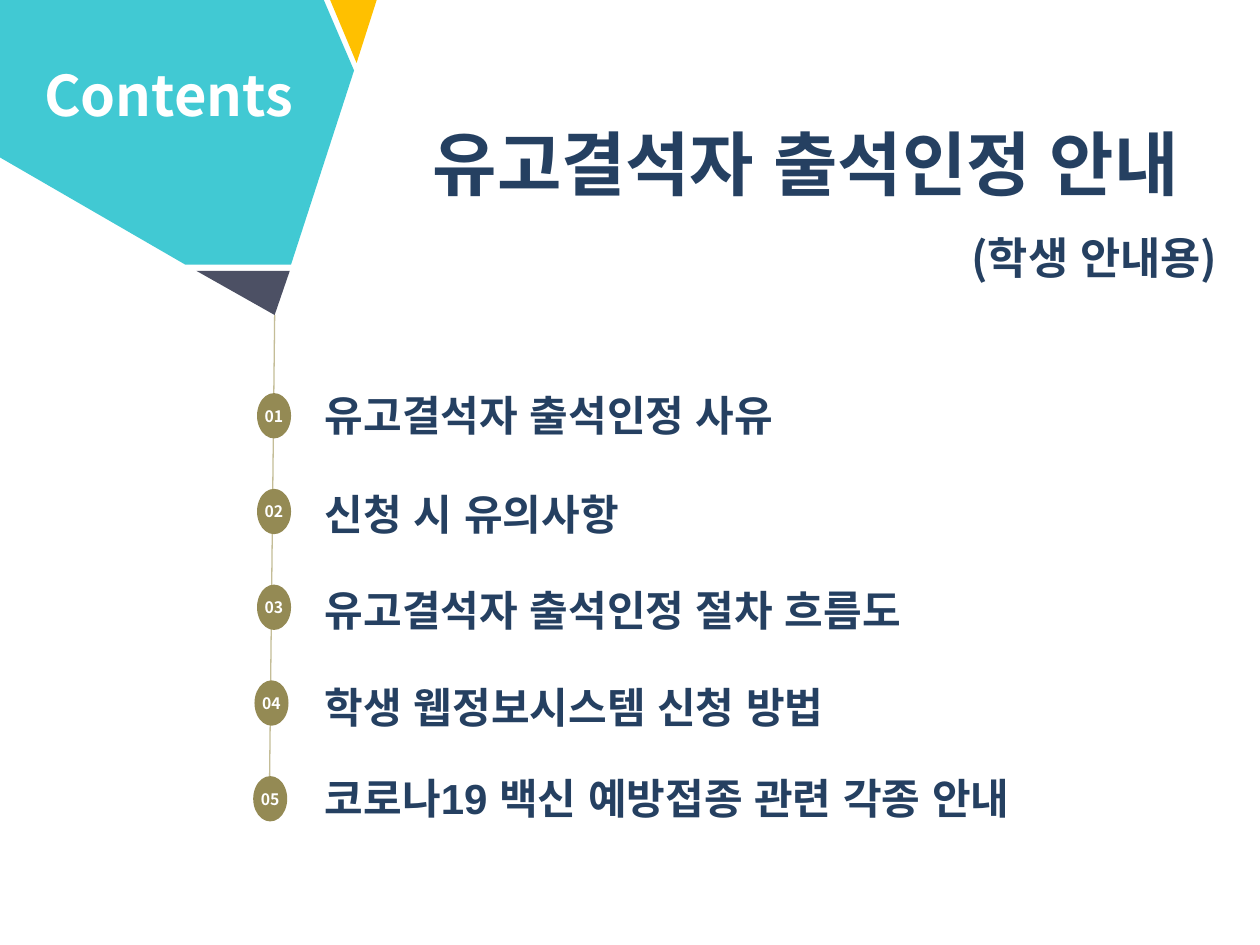
from lxml import etree
from pptx import Presentation
from pptx import util as u
from pptx.dml.color import RGBColor
from pptx.enum import shapes, text
from pptx.oxml import ns

TEAL = RGBColor(0x41, 0xC9, 0xD3)
GOLD = RGBColor(0xFF, 0xC0, 0x00)
SLATE = RGBColor(0x4C, 0x50, 0x64)
OLIVE = RGBColor(0x94, 0x8A, 0x54)
SAND = RGBColor(0xC4, 0xBD, 0x97)
NAVY = RGBColor(0x25, 0x40, 0x61)
WHITE = RGBColor(0xFF, 0xFF, 0xFF)
NOTO = "Noto Sans CJK KR"
ARIAL = "Arial"

HEAD = [
    ("유고결석자 출석인정 안내", 40, text.PP_ALIGN.CENTER),
    ("(학생 안내용)", 25, text.PP_ALIGN.RIGHT),
]
ITEMS = [
    ("유고결석자 출석인정 사유", 2.04, 3.04),
    ("신청 시 유의사항", 2.04, 3.83),
    ("유고결석자 출석인정 절차 흐름도", 2.04, 4.59),
    ("학생 웹정보시스템 신청 방법", 2.02, 5.36),
    ("코로나19 백신 예방접종 관련 각종 안내", 2.01, 6.08),
]
FACETS = [
    (GOLD, [(262, 0), (300, 0), (299, 0), (283, 50)]),
    (TEAL, [(0, 0), (257, 0), (281, 56), (231, 210), (147, 210), (0, 125)]),
    (SLATE, [(156, 215), (230, 215), (218, 250)]),
]
FIRST, PITCH = 3.12, 0.76
DOT = (0.27, 0.36)


def style(para, size, face, color, align):
    para.alignment = align
    for run in para.runs:
        font = run.font
        font.size, font.bold, font.name = u.Pt(size), True, face
        font.color.rgb = color
        east = etree.SubElement(font._element, ns.qn("a:ea"))
        east.set("typeface", ARIAL)


def paint(shape, color):
    shape.shadow.inherit = False
    shape.fill.solid()
    shape.fill.fore_color.rgb = color
    shape.line.fill.background()


def label(slide, box, words, size, face, color, align):
    frame = slide.shapes.add_textbox(*map(u.Inches, box)).text_frame
    frame.word_wrap = True
    frame.auto_size = text.MSO_AUTO_SIZE.SHAPE_TO_FIT_TEXT
    frame.text = words
    style(frame.paragraphs[0], size, face, color, align)


def add_head(slide):
    title = slide.shapes.title
    title.left, title.top, title.width, title.height = map(
        u.Inches, (3.03, 0.57, 6.73, 1.93))
    frame = title.text_frame
    frame.text = "\n".join(words for words, _, _ in HEAD)
    frame.word_wrap = True
    frame.auto_size = text.MSO_AUTO_SIZE.NONE
    frame.vertical_anchor = text.MSO_ANCHOR.TOP
    for para, (_, size, align) in zip(frame.paragraphs, HEAD):
        para.line_spacing = 1.5
        style(para, size, NOTO, NAVY, align)


def add_line(slide):
    line = slide.shapes.add_connector(
        shapes.MSO_CONNECTOR.STRAIGHT, *map(u.Inches, (2.18, 2.5, 2.14, 6.16)))
    line.line.color.rgb = SAND
    line.line.width = u.Pt(0.75)
    etree.SubElement(line._element.spPr, ns.qn("a:effectLst"))


def add_facets(slide):
    for color, points in FACETS:
        pen = slide.shapes.build_freeform(*points[0], scale=u.Inches(0.01))
        pen.add_line_segments(points[1:], close=True)
        paint(pen.convert_to_shape(), color)


def add_items(slide):
    for row, (words, left, top) in enumerate(ITEMS):
        dot = slide.shapes.add_shape(
            shapes.MSO_SHAPE.OVAL,
            *map(u.Inches, (left, FIRST + row * PITCH, *DOT)))
        paint(dot, OLIVE)
        frame = dot.text_frame
        frame.margin_left = frame.margin_right = 0
        frame.margin_top = frame.margin_bottom = 0
        frame.vertical_anchor = text.MSO_ANCHOR.MIDDLE
        frame.text = f"{row + 1:02d}"
        style(frame.paragraphs[0], 9, NOTO, WHITE, text.PP_ALIGN.CENTER)
        label(slide, (2.48, top, 7.17, 0.5), words, 24, ARIAL, NAVY,
              text.PP_ALIGN.LEFT)


def main():
    deck = Presentation()
    deck.slide_width, deck.slide_height = u.Inches(10), u.Inches(7.5)
    slide = deck.slides.add_slide(deck.slide_layouts[5])
    add_line(slide)
    add_facets(slide)
    label(slide, (0.04, 0.43, 2.6, 0.64), "Contents", 32, NOTO, WHITE,
          text.PP_ALIGN.CENTER)
    add_head(slide)
    add_items(slide)
    deck.save("out.pptx")


if __name__ == "__main__":
    main()
